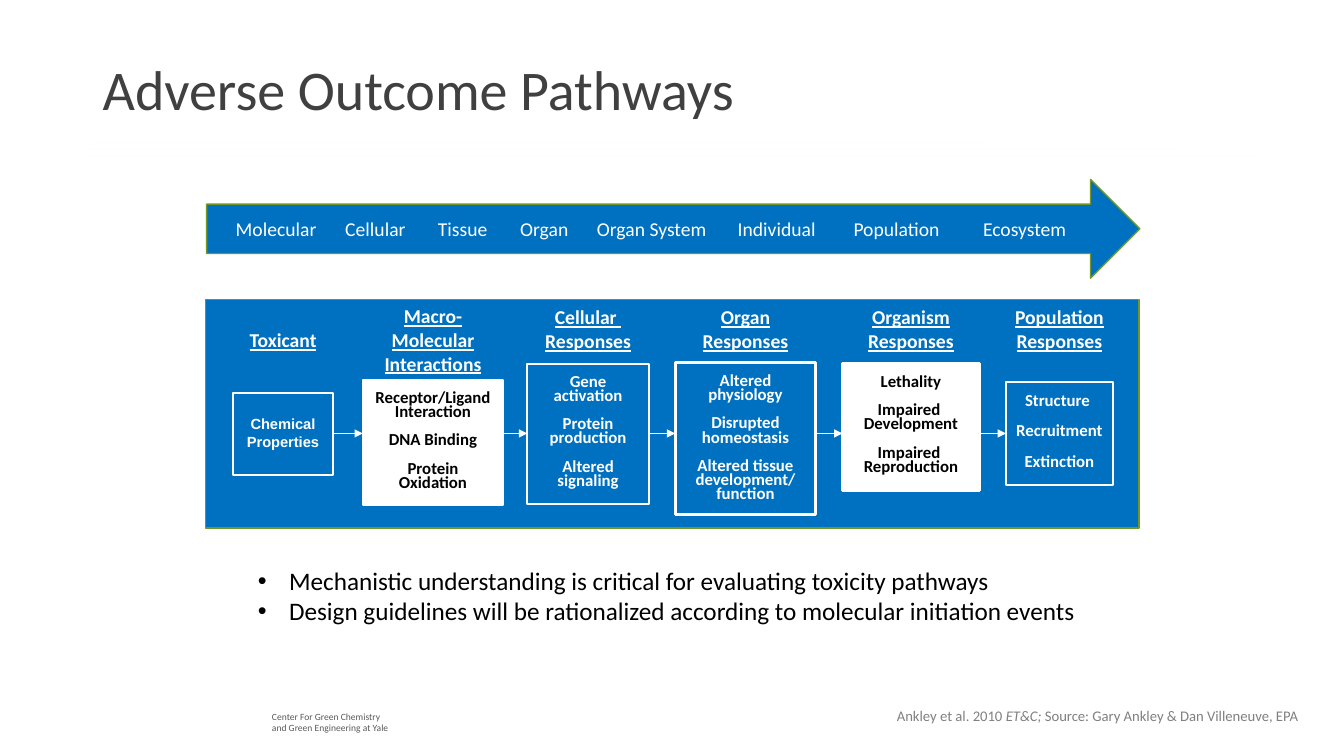
import dataclasses
import itertools
import typing

import lxml.etree
import pptx
import pptx.dml.color
import pptx.enum.shapes
import pptx.enum.text
import pptx.oxml.ns
import pptx.util

COLUMNS, ROWS = 160, 90
SLIDE_WIDTH, SLIDE_HEIGHT = pptx.util.Inches(13.333), pptx.util.Inches(7.5)
COLORS = {
    "blue": "0070C0", "olive": "719629", "white": "FFFFFF", "black": "000000",
    "title": "404040", "footer": "595959", "citation": "808080",
    "sky": "4EB3CF", "teal": "44C1A3", "green": "37A76F",
}
CENTER = pptx.enum.text.PP_ALIGN.CENTER
LEFT = pptx.enum.text.PP_ALIGN.LEFT
MIDDLE = pptx.enum.text.MSO_ANCHOR.MIDDLE
TOP = pptx.enum.text.MSO_ANCHOR.TOP
RECTANGLE = pptx.enum.shapes.MSO_SHAPE.RECTANGLE
RIGHT_ARROW = pptx.enum.shapes.MSO_SHAPE.RIGHT_ARROW
SINGLE_LINE_FACTOR = 1.22
ARROW_ROW = 51.6


class Area(typing.NamedTuple):
    column: float
    row: float
    width: float
    height: float


class Label(typing.NamedTuple):
    text: str
    column: float
    width: float


class Rule(typing.NamedTuple):
    color: str
    start: float
    end: float
    row: float


@dataclasses.dataclass
class Style:
    size: float
    color: str
    name: str = "Calibri"
    bold: bool = False
    underline: bool = False
    align: typing.Any = LEFT
    spacing: float = 1.0


@dataclasses.dataclass
class Stage:
    heading: tuple[str, ...]
    heading_row: float
    heading_lines: int
    area: Area
    groups: tuple[tuple[str, ...], ...]
    style: Style
    fill: str | None = None
    border: float = 1.5
    top_inset: float = 0.12


HEADING = Style(14, "white", bold=True, underline=True, align=CENTER)
SCALE = Style(14, "white", align=CENTER)
LIGHT = Style(12, "white", bold=True, align=CENTER, spacing=0.7)
DARK = dataclasses.replace(LIGHT, color="black")
LOOSE = dataclasses.replace(LIGHT, spacing=0.75)
CHEMICAL = Style(10.5, "white", name="Arial", bold=True, align=CENTER)

STAGES = (
    Stage(("Toxicant",), 38.5, 1, Area(27.7, 46.8, 12, 9.72),
          (("Chemical", "Properties"),), CHEMICAL, top_inset=0.22),
    Stage(("Macro-Molecular", "Interactions"), 35.64, 3, Area(43.2, 45.24, 16.7, 14.9),
          (("Receptor/Ligand", "Interaction"), ("DNA Binding",), ("Protein Oxidation",)),
          DARK, fill="white"),
    Stage(("Cellular ", "Responses"), 35.76, 2, Area(62.76, 43.3, 14.5, 16.7),
          (("Gene activation",), ("Protein production",), ("Altered signaling",)), LIGHT),
    Stage(("Organ", "Responses"), 35.76, 2, Area(80.4, 43.2, 16.7, 18.1),
          (("Altered physiology",), ("Disrupted homeostasis",),
           ("Altered tissue development/ function",)), LIGHT, border=2),
    Stage(("Organism", "Responses"), 35.76, 2, Area(100.3, 43.3, 16.3, 15.1),
          (("Lethality",), ("Impaired ", "Development"), ("Impaired ", "Reproduction")),
          DARK, fill="white", border=2),
    Stage(("Population", "Responses"), 35.76, 2, Area(119.76, 45.5, 12.72, 12.24),
          (("Structure ",), ("Recruitment",), ("Extinction",)), LOOSE),
)
LABELS = (
    Label("Molecular", 26.64, 12.48), Label("Cellular", 39.48, 10.44),
    Label("Tissue", 50.52, 9.12), Label("Organ", 60.24, 9.12),
    Label("Organ System", 69.84, 15.48), Label("Individual", 86.16, 12.6),
    Label("Population", 99.48, 14.52), Label("Ecosystem", 114.84, 14.28),
)
RULES = (
    Rule("sky", 11.04, 117.24, 16.92),
    Rule("teal", 10.8, 140.5, 17.76),
    Rule("green", 10.92, 149.04, 18.6),
)


def across(columns: float) -> int:
    return round(SLIDE_WIDTH * columns / COLUMNS)


def down(rows: float) -> int:
    return round(SLIDE_HEIGHT * rows / ROWS)


def place(area: Area) -> tuple[int, int, int, int]:
    return across(area.column), down(area.row), across(area.width), down(area.height)


def rgb(color: str) -> pptx.dml.color.RGBColor:
    return pptx.dml.color.RGBColor.from_string(COLORS[color])


def add_xml(parent, tag: str, **attributes: str):
    return lxml.etree.SubElement(parent, pptx.oxml.ns.qn(tag), attributes)


def add_span(para, text: str, style: Style, italic: bool = False) -> None:
    span = para.add_run()
    span.text = text
    values = {"size": pptx.util.Pt(style.size), "name": style.name, "bold": style.bold,
              "underline": style.underline, "italic": italic}
    for key, value in values.items():
        setattr(span.font, key, value)
    span.font.color.rgb = rgb(style.color)


def write(box, groups, style: Style, anchor=TOP, top: float = 0.05, side: float = 0.1) -> None:
    frame = box.text_frame
    values = {"word_wrap": True, "vertical_anchor": anchor,
              "margin_top": pptx.util.Inches(top), "margin_bottom": pptx.util.Inches(0.05),
              "margin_left": pptx.util.Inches(side), "margin_right": pptx.util.Inches(side)}
    for key, value in values.items():
        setattr(frame, key, value)
    gap = pptx.util.Pt(round(style.size * SINGLE_LINE_FACTOR * style.spacing, 2))
    for group_index, group in enumerate(groups):
        for line_index, text in enumerate(group):
            first = group_index == line_index == 0
            para = frame.paragraphs[0] if first else frame.add_paragraph()
            para.alignment = style.align
            para.line_spacing = style.spacing
            if group_index and not line_index:
                para.space_before = gap
            add_span(para, text, style)


def add_text(page, area: Area, lines: tuple[str, ...], style: Style, anchor=TOP):
    box = page.shapes.add_textbox(*place(area))
    write(box, (lines,), style, anchor)
    return box


def add_block(page, kind, area: Area, fill: str | None, line: str, weight: float):
    block = page.shapes.add_shape(kind, *place(area))
    block.shadow.inherit = False
    if fill:
        block.fill.solid()
        block.fill.fore_color.rgb = rgb(fill)
    else:
        block.fill.background()
    block.line.color.rgb = rgb(line)
    block.line.width = pptx.util.Pt(weight)
    return block


def add_line(page, rule: Rule):
    line = page.shapes.add_connector(
        pptx.enum.shapes.MSO_CONNECTOR.STRAIGHT,
        across(rule.start), down(rule.row), across(rule.end), down(rule.row))
    line.line.color.rgb = rgb(rule.color)
    line.line.width = pptx.util.Pt(0.5)
    add_xml(line._element.spPr, "a:effectLst")
    return line.line._get_or_add_ln()


def add_stage(page, stage: Stage) -> None:
    area = stage.area
    box = add_block(page, RECTANGLE, area, stage.fill, "white", stage.border)
    write(box, stage.groups, stage.style, top=stage.top_inset, side=0.09)
    heading = Area(area.column + area.width / 2 - 8, stage.heading_row, 16,
                   1.2 + 2.84 * stage.heading_lines)
    add_text(page, heading, stage.heading, HEADING)


def main() -> None:
    deck = pptx.Presentation()
    deck.slide_width, deck.slide_height = SLIDE_WIDTH, SLIDE_HEIGHT
    page = deck.slides.add_slide(deck.slide_layouts[6])

    add_text(page, Area(31.2, 84, 22.32, 3.96),
             ("Center For Green Chemistry", "and Green Engineering at Yale"),
             Style(6.8, "footer"))
    for rule in RULES:
        outline = add_line(page, rule)
        color = outline.find(".//" + pptx.oxml.ns.qn("a:srgbClr"))
        add_xml(color, "a:alpha", val="2000")

    add_block(page, RECTANGLE, Area(24.5, 35.64, 111.1, 27.24), "blue", "olive", 1)
    for stage in STAGES:
        add_stage(page, stage)
    for before, after in itertools.pairwise(STAGES):
        start = before.area.column + before.area.width
        outline = add_line(page, Rule("white", start, after.area.column, ARROW_ROW))
        add_xml(outline, "a:tailEnd", type="triangle")

    add_block(page, RIGHT_ARROW, Area(24.6, 21.36, 111.1, 11.76), "blue", "olive", 1)
    for label in LABELS:
        add_text(page, Area(label.column, 25.2, label.width, 4.08), (label.text,), SCALE, MIDDLE)

    citation = Style(10.5, "citation")
    source = add_text(page, Area(105.6, 83.52, 52.5, 3.36), ("Ankley et al. 2010 ",), citation)
    para = source.text_frame.paragraphs[0]
    add_span(para, "ET&C; ", citation, italic=True)
    add_span(para, "Source: Gary Ankley & Dan Villeneuve, EPA", citation)

    points = add_text(page, Area(29.52, 66.72, 103, 8.52), (
        "Mechanistic understanding is critical for evaluating toxicity pathways",
        "Design guidelines will be rationalized according to molecular initiation events",
    ), Style(18, "black"))
    indent = pptx.util.Inches(0.31)
    for para in points.text_frame.paragraphs:
        properties = para._p.get_or_add_pPr()
        properties.set("marL", str(indent))
        properties.set("indent", str(-indent))
        add_xml(properties, "a:buFont", typeface="Arial")
        add_xml(properties, "a:buChar", char="•")

    add_text(page, Area(11.04, 2.28, 138, 17.4), ("Adverse Outcome Pathways",),
             Style(40, "title", spacing=0.9), MIDDLE)
    deck.save("out.pptx")


if __name__ == "__main__":
    main()
